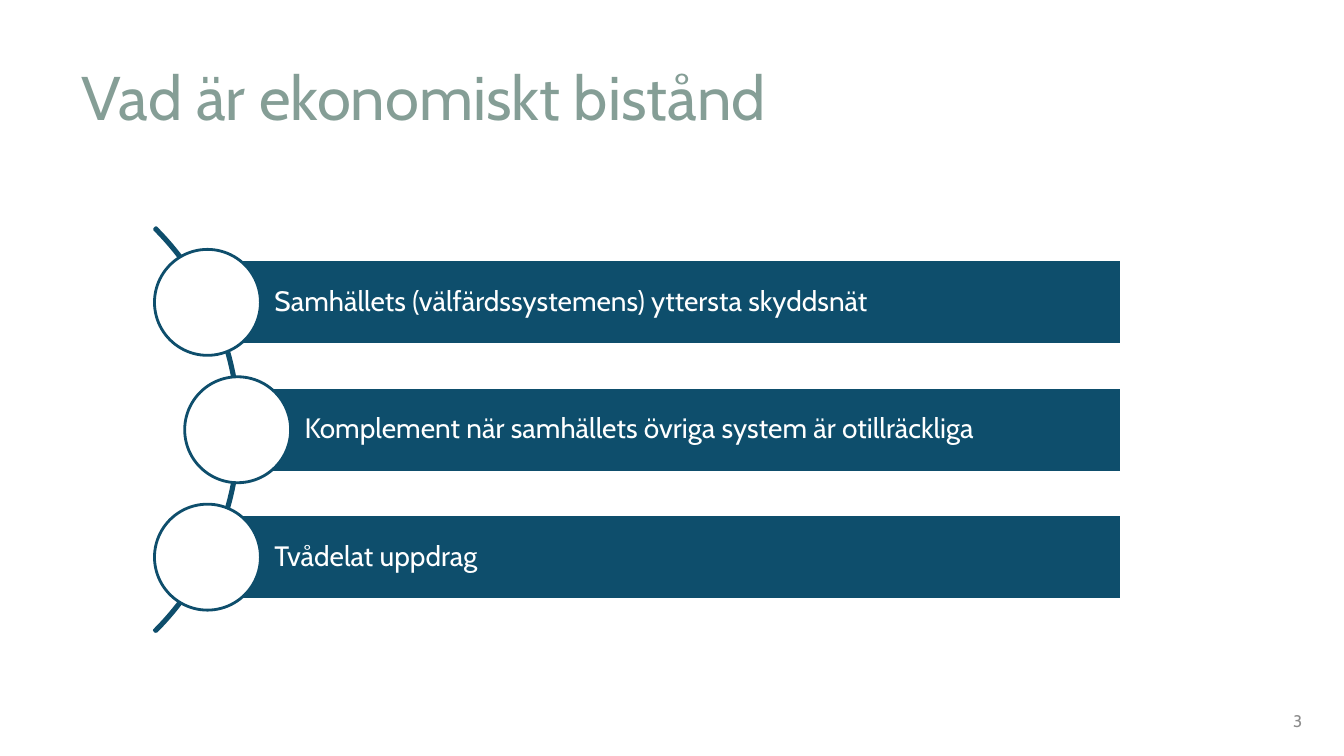
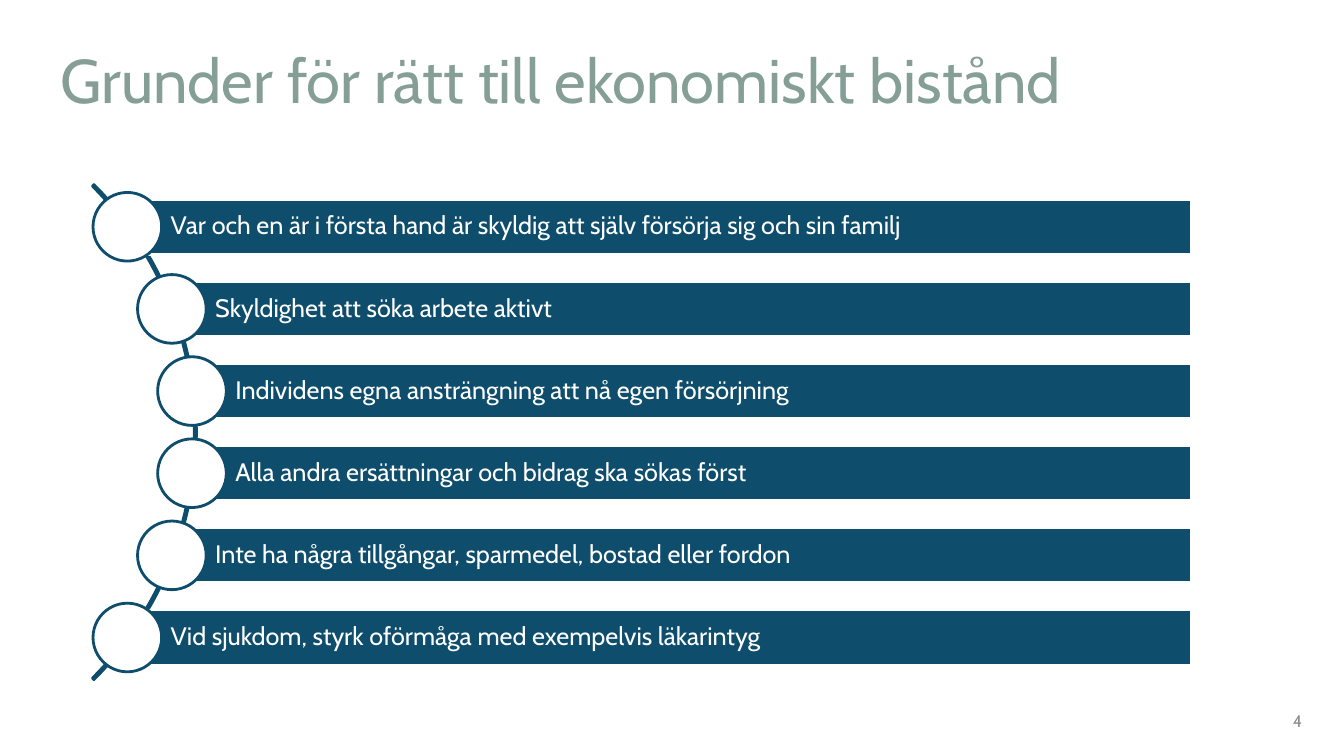
from math import sqrt
from pptx import Presentation
from pptx.dml.color import RGBColor
from pptx.enum.shapes import MSO_SHAPE as Kind
from pptx.enum.text import MSO_ANCHOR as Anchor, PP_ALIGN as Align
from pptx.util import Cm, Pt

FONT = "Cabin"
BLUE, WHITE, SAGE, GREY = "0E4E6C", "FFFFFF", "859E96", "8C8C8C"
TITLE = {"size": 44, "color": SAGE, "anchor": Anchor.BOTTOM, "spacing": 0.9}
NUMBER = {"size": 12, "color": GREY, "align": Align.RIGHT}

SLIDES = [
    {
        "title": "Vad är ekonomiskt bistånd",
        "box": (1.8, 1.07, 27.84, 2.44),
        "number": "3",
        "center": (-1.16, 10.83), "radius": 7.2, "band": 0.004,
        "pitch": 3.21, "dot": 2.67, "right": 28.27, "size": 20,
        "items": [
            "Samhällets (välfärdssystemens) yttersta skyddsnät",
            "Komplement när samhällets övriga system är otillräckliga",
            "Tvådelat uppdrag",
        ],
    },
    {
        "title": "Grunder för rätt till ekonomiskt bistånd",
        "box": (1.27, 0.81, 26.85, 2.26),
        "number": "4",
        "center": (-3.87, 10.89), "radius": 8.82, "band": 0.003,
        "pitch": 2.07, "dot": 1.73, "right": 30.03, "size": 18,
        "items": [
            "Var och en är i första hand är skyldig att själv försörja sig och sin familj",
            "Skyldighet att söka arbete aktivt",
            "Individens egna ansträngning att nå egen försörjning",
            "Alla andra ersättningar och bidrag ska sökas först",
            "Inte ha några tillgångar, sparmedel, bostad eller fordon",
            "Vid sjukdom, styrk oförmåga med exempelvis läkarintyg",
        ],
    },
]


def rgb(code):
    """Turn a hex string into a colour."""
    return RGBColor.from_string(code)


def write(shape, text, size, color, align=Align.LEFT, anchor=Anchor.MIDDLE,
          spacing=1.0, insets=(0.25, 0.13, 0.25, 0.13)):
    """Put one formatted paragraph into a shape."""
    frame = shape.text_frame
    frame.word_wrap = True
    frame.vertical_anchor = anchor
    for side, inset in zip(("left", "top", "right", "bottom"), insets):
        setattr(frame, f"margin_{side}", Cm(inset))
    para = frame.paragraphs[0]
    para.alignment, para.line_spacing = align, spacing
    run = para.add_run()
    run.text = text
    for name, value in {"name": FONT, "size": Pt(size)}.items():
        setattr(run.font, name, value)
    run.font.color.rgb = rgb(color)


def label(slide, box, text, style):
    """Add a text box."""
    write(slide.shapes.add_textbox(*map(Cm, box)), text, **style)


def draw(slide, kind, box, line, fill=None):
    """Add a flat outlined shape."""
    shape = slide.shapes.add_shape(kind, *map(Cm, box))
    shape.shadow.inherit = False
    if fill:
        shape.fill.solid()
        shape.fill.fore_color.rgb = rgb(fill)
    else:
        shape.fill.background()
    shape.line.color.rgb = rgb(line)
    shape.line.width = Pt(2)
    return shape


def curve(slide, data):
    """Draw the arc with its bars and circles."""
    (mid, axis), radius, dot = data["center"], data["radius"], data["dot"]
    arc = draw(slide, Kind.BLOCK_ARC,
               (mid - radius, axis - radius, 2 * radius, 2 * radius), BLUE)
    for i, value in enumerate((189, 27, data["band"])):
        arc.adjustments[i] = value
    items, high = data["items"], 0.8 * dot
    for i, text in enumerate(items):
        drop = (i - (len(items) - 1) / 2) * data["pitch"]
        x, y = mid + sqrt((radius - 0.05) ** 2 - drop ** 2), axis + drop
        bar = draw(slide, Kind.RECTANGLE,
                   (x, y - high / 2, data["right"] - x, high), WHITE, BLUE)
        write(bar, text, data["size"], WHITE, spacing=0.9,
              insets=(0.79 * high, 0.14, 0.14, 0.14))
        draw(slide, Kind.OVAL, (x - dot / 2, y - dot / 2, dot, dot), BLUE, WHITE)


def main():
    """Build and save the slides."""
    deck = Presentation()
    deck.slide_width, deck.slide_height = Cm(33.87), Cm(19.05)
    for data in SLIDES:
        slide = deck.slides.add_slide(deck.slide_layouts[6])
        label(slide, data["box"], data["title"], TITLE)
        label(slide, (25.45, 17.65, 7.62, 1.02), data["number"], NUMBER)
        curve(slide, data)
    deck.save("out.pptx")


if __name__ == "__main__":
    main()
